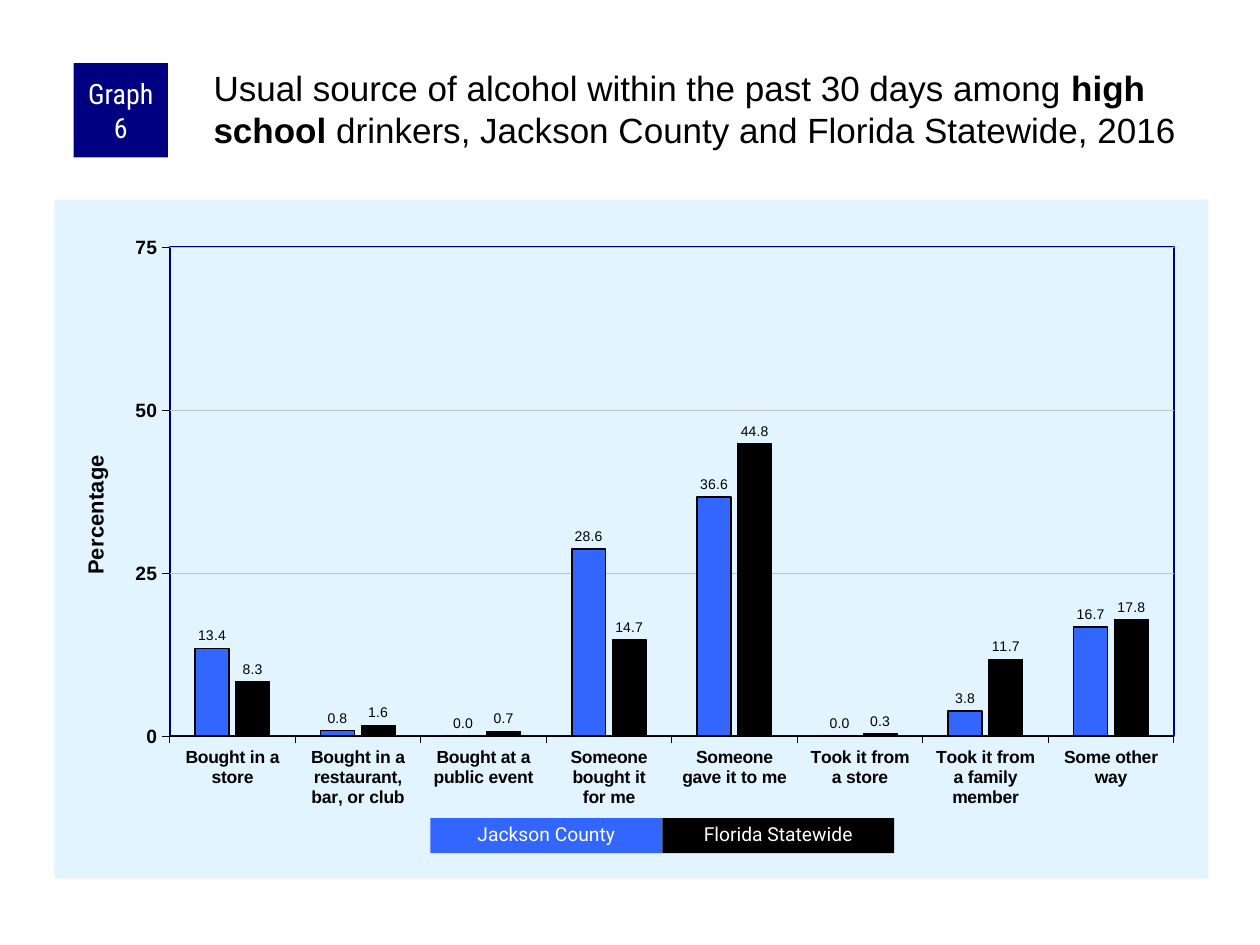
from dataclasses import dataclass

from lxml import etree
from pptx import Presentation
from pptx.chart.data import CategoryChartData
from pptx.dml.color import RGBColor
from pptx.enum.chart import XL_CHART_TYPE, XL_LABEL_POSITION, XL_TICK_MARK
from pptx.enum.shapes import MSO_SHAPE
from pptx.enum.text import MSO_ANCHOR, PP_ALIGN
from pptx.oxml import parse_xml
from pptx.oxml.ns import nsdecls, qn
from pptx.util import Pt

COLUMNS = XL_CHART_TYPE.COLUMN_CLUSTERED
OUTSIDE_END = XL_LABEL_POSITION.OUTSIDE_END
TICK_OUT, TICK_NONE = XL_TICK_MARK.OUTSIDE, XL_TICK_MARK.NONE
RECT = MSO_SHAPE.RECTANGLE
TOP, MIDDLE = MSO_ANCHOR.TOP, MSO_ANCHOR.MIDDLE
LEFT, CENTER = PP_ALIGN.LEFT, PP_ALIGN.CENTER


@dataclass(frozen=True)
class Theme:
    font: str = "Arial"
    tag_font: str = "Roboto Condensed"
    key_font: str = "Roboto"
    ink: str = "000000"
    white: str = "FFFFFF"
    navy: str = "000080"
    blue: str = "3366FF"
    panel: str = "E1F4FF"
    grid: str = "C0C0C0"
    title_size: float = 20
    tag_size: float = 16
    axis_title_size: float = 12.5
    key_size: float = 11
    value_size: float = 11
    category_size: float = 10
    label_size: float = 8


def rgb(color):
    return RGBColor.from_string(color)


def set_font(font, name, size, color, bold=False):
    font.name, font.size, font.bold = name, Pt(size), bold
    font.color.rgb = rgb(color)


def set_line(line, color, width):
    line.color.rgb = rgb(color)
    line.width = Pt(width)


def area_format(fill="", line=""):
    """Return chart area properties with an optional fill and outline."""
    fill = f'<a:solidFill><a:srgbClr val="{fill}"/></a:solidFill>' if fill else "<a:noFill/>"
    line = f'<a:solidFill><a:srgbClr val="{line}"/></a:solidFill>' if line else "<a:noFill/>"
    return parse_xml(f'<c:spPr {nsdecls("c", "a")}>{fill}<a:ln w="{Pt(1)}">{line}</a:ln></c:spPr>')


def set_layout(parent, before, target="", **fractions):
    """Place a chart part by fractions of the chart; before is the preceding sibling."""
    for old in parent.findall(qn("c:layout")):
        parent.remove(old)
    layout = etree.Element(qn("c:layout"))
    manual = etree.SubElement(layout, qn("c:manualLayout"))
    if target:
        etree.SubElement(manual, qn("c:layoutTarget"), val=target)
    for key in ("x", "y"):
        etree.SubElement(manual, qn(f"c:{key}Mode"), val="edge")
    for key, value in fractions.items():
        etree.SubElement(manual, qn(f"c:{key}"), val=str(value))
    if before is None:
        parent.insert(0, layout)
    else:
        before.addnext(layout)


class SlideBuilder:
    """Holds the theme and the slide being filled; boxes are in points."""

    def __init__(self, slide, theme):
        self.s, self.theme = slide, theme

    def title(self, box, parts):
        """Fill the title placeholder from (text, bold) pairs."""
        sp = self.s.shapes.title
        sp.left, sp.top, sp.width, sp.height = map(Pt, box)
        tf = sp.text_frame
        tf.word_wrap, tf.vertical_anchor = True, TOP
        tf.margin_left = tf.margin_top = Pt(2)
        tf.margin_right = tf.margin_bottom = 0
        p = tf.paragraphs[0]
        p.alignment = LEFT
        for text, bold in parts:
            r = p.add_run()
            r.text = text
            set_font(r.font, self.theme.font, self.theme.title_size, self.theme.ink, bold)

    def block(self, box, text, fill, font, size, margins=(7.2, 3.6), spacing=1.0):
        sp = self.s.shapes.add_shape(RECT, *map(Pt, box))
        sp.shadow.inherit = False
        sp.fill.solid()
        sp.fill.fore_color.rgb = rgb(fill)
        sp.line.fill.background()
        tf = sp.text_frame
        tf.word_wrap, tf.vertical_anchor = True, MIDDLE
        tf.margin_left = tf.margin_right = Pt(margins[0])
        tf.margin_top = tf.margin_bottom = Pt(margins[1])
        p = tf.paragraphs[0]
        p.text, p.alignment, p.line_spacing = text, CENTER, spacing
        set_font(p.font, font, size, self.theme.white)

    def axis(self, axis, size):
        axis.major_tick_mark, axis.minor_tick_mark = TICK_OUT, TICK_NONE
        set_font(axis.tick_labels.font, self.theme.font, size, self.theme.ink, True)
        set_line(axis.format.line, self.theme.ink, 0.25)

    def column_chart(self, box, categories, series, axis_title):
        """Draw clustered columns; series holds (name, color, line width, values)."""
        t = self.theme
        data = CategoryChartData(number_format="0.0")
        data.categories = categories
        for name, _, _, values in series:
            data.add_series(name, values)
        chart = self.s.shapes.add_chart(COLUMNS, *map(Pt, box), data).chart
        chart.has_title = chart.has_legend = False
        set_font(chart.font, t.font, t.key_size, t.ink)

        self.axis(chart.category_axis, t.category_size)
        value_axis = chart.value_axis
        self.axis(value_axis, t.value_size)
        value_axis.minimum_scale, value_axis.maximum_scale = 0, 75
        value_axis.major_unit = 25
        value_axis.tick_labels.number_format = "0"
        value_axis.tick_labels.number_format_is_linked = False
        set_line(value_axis.major_gridlines.format.line, t.grid, 0.25)
        tf = value_axis.axis_title.text_frame
        tf.text = axis_title
        set_font(tf.paragraphs[0].font, t.font, t.axis_title_size, t.ink, True)
        title = value_axis.axis_title._element
        set_layout(title, title.find(qn("c:tx")), x=0.02, y=0.37)

        plot = chart.plots[0]
        plot.gap_width, plot.overlap, plot.vary_by_categories = 150, -20, False
        for ser, (_, color, width, _) in zip(plot.series, series):
            ser.format.fill.solid()
            ser.format.fill.fore_color.rgb = rgb(color)
            set_line(ser.format.line, t.ink, width)
            labels = ser.data_labels
            labels.show_value, labels.position = True, OUTSIDE_END
            labels.number_format, labels.number_format_is_linked = "0.0", False
            set_font(labels.font, t.font, t.label_size, t.ink)

        space = chart._chartSpace
        space.find(qn("c:chart")).addnext(area_format(fill=t.panel))
        area = space.find(".//" + qn("c:plotArea"))
        area.append(area_format(line=t.navy))
        set_layout(area, None, "inner", x=0.1, y=0.07, w=0.87, h=0.72)


def main():
    theme = Theme()
    prs = Presentation()
    prs.slide_width, prs.slide_height = Pt(720), Pt(540)
    page = SlideBuilder(prs.slides.add_slide(prs.slide_layouts[5]), theme)

    page.title((120, 36, 570, 60), [
        ("Usual source of alcohol within the past 30 days among ", False),
        ("high school", True),
        (" drinkers, Jackson County and Florida Statewide, 2016", False),
    ])
    categories = [
        "Bought in a store", "Bought in a restaurant, bar, or club",
        "Bought at a public event", "Someone bought it\nfor me",
        "Someone\ngave it to me", "Took it from\na store",
        "Took it from\na family member", "Some other way",
    ]
    series = [
        ("Jackson County", theme.blue, 1, (13.4, 0.8, 0, 28.6, 36.6, 0, 3.8, 16.7)),
        ("Florida Statewide", theme.ink, 0.75, (8.3, 1.6, 0.7, 14.7, 44.8, 0.3, 11.7, 17.8)),
    ]
    page.column_chart((31, 114, 659.5, 388), categories, series, "Percentage")
    page.block((42, 36, 54, 54), "Graph 6", theme.navy, theme.tag_font,
               theme.tag_size, margins=(3.6, 0))
    key_left, key_width = 246, 132.5
    for i, (name, color, _, _) in enumerate(series):
        page.block((key_left + i * key_width, 467.5, key_width, 20), name, color,
                   theme.key_font, theme.key_size, spacing=0.9)
    prs.save("out.pptx")


if __name__ == "__main__":
    main()
